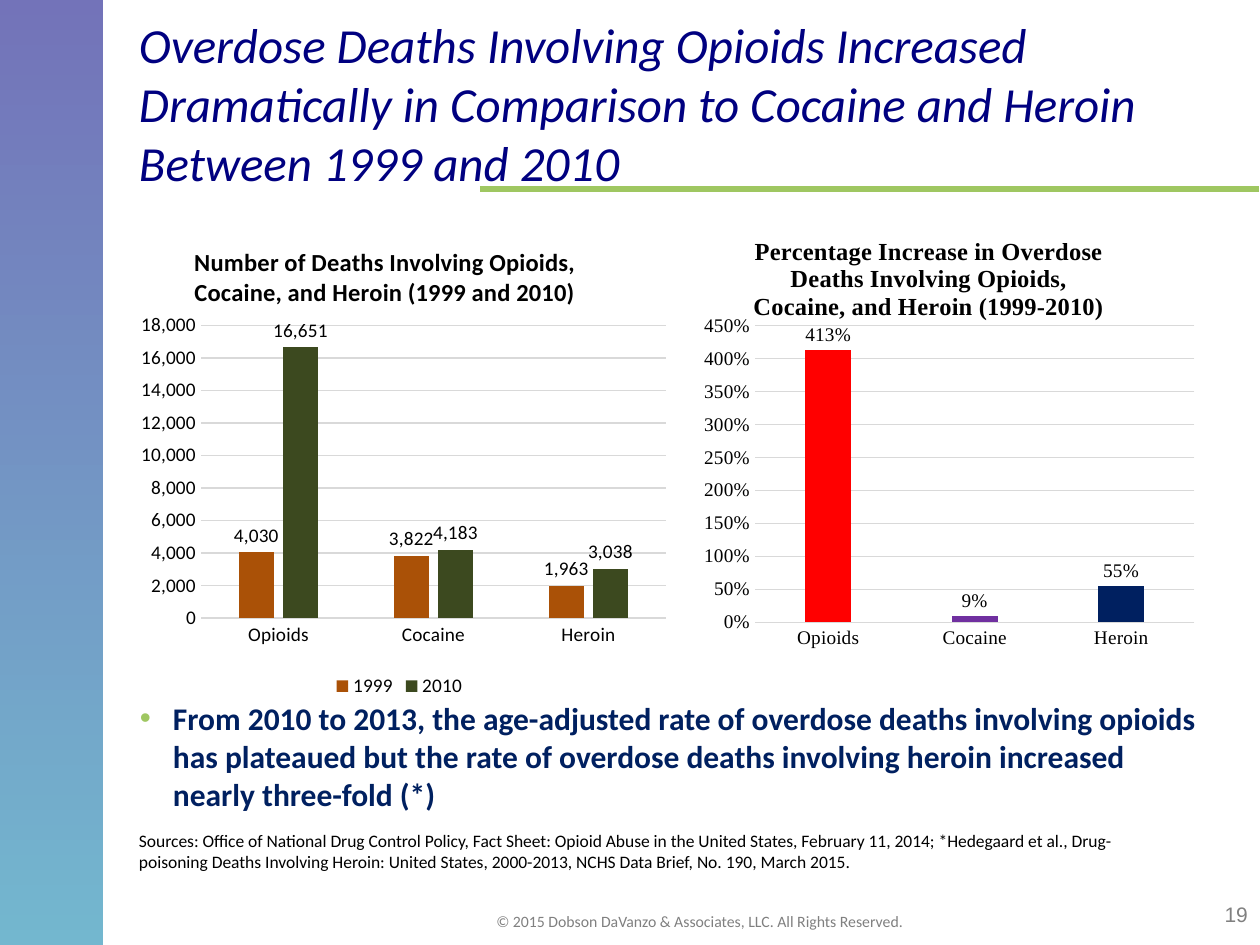
import pptx
import pptx.chart.data
import pptx.dml.color
import pptx.enum.chart
import pptx.enum.dml
import pptx.enum.shapes
import pptx.enum.text
import pptx.oxml
import pptx.oxml.ns
import pptx.util

SCALE = 914400 / 126  # EMU in one px
ALIGN = pptx.enum.text.PP_ALIGN
ANCHOR = pptx.enum.text.MSO_ANCHOR
KINDS = pptx.enum.chart


def px(num):
    return pptx.util.Emu(round(num * SCALE))


def hue(code):
    return pptx.dml.color.RGBColor.from_string(code)


def node(tag, **attrs):
    item = pptx.oxml.parse_xml(f"<{tag} {pptx.oxml.ns.nsdecls(tag.split(':')[0])}/>")
    for key, val in attrs.items():
        item.set(key, str(val))
    return item


def apply(item, **vals):
    for key, val in vals.items():
        setattr(item, key, val)


def style(font, size, color, name="Calibri", **more):
    apply(font, size=pptx.util.Pt(size), name=name, **more)
    font.color.rgb = hue(color)


def layout(**spots):
    """Manual chart layout from fractions of the chart's size."""
    item = node("c:layout")
    hand = node("c:manualLayout")
    item.append(hand)
    if "w" in spots:
        hand.append(node("c:layoutTarget", val="inner"))
    for key in ("x", "y"):
        hand.append(node(f"c:{key}Mode", val="edge"))
    for key, val in spots.items():
        hand.append(node(f"c:{key}", val=val))
    return item


class Deck:
    navy, green, grey, black, rule = "000080", "9FC761", "808080", "000000", "D9D9D9"

    def __init__(self):
        self.show = pptx.Presentation()
        apply(self.show, slide_width=px(1260), slide_height=px(945))
        self.slide = self.show.slides.add_slide(self.show.slide_layouts[1])
        self.shapes = self.slide.shapes

    def band(self, box, stops, alpha):
        rect = self.shapes.add_shape(
            pptx.enum.shapes.MSO_SHAPE.RECTANGLE, *map(px, box))
        rect.shadow.inherit = False
        rect.line.fill.background()
        rect.fill.gradient()
        rect.fill.gradient_angle = 270
        for stop, (place, code) in zip(rect.fill.gradient_stops, stops):
            stop.position = place
            stop.color.rgb = hue(code)
        for tint in rect.fill._xPr.iter(pptx.oxml.ns.qn("a:srgbClr")):
            tint.append(node("a:alpha", val=alpha * 1000))

    def line(self, ends, color, width):
        rule = self.shapes.add_connector(
            pptx.enum.shapes.MSO_CONNECTOR.STRAIGHT, *map(px, ends))
        rule.line.color.rgb = hue(color)
        rule.line.width = pptx.util.Pt(width)
        rule._element.spPr.append(node("a:effectLst"))

    def fill(self, shape, text, size, color, align=ALIGN.LEFT, inset=(12, 6),
             anchor=ANCHOR.TOP, bullet=None, **font):
        frame = shape.text_frame
        side, edge = map(px, inset)
        apply(frame, word_wrap=True, auto_size=pptx.enum.text.MSO_AUTO_SIZE.NONE,
              vertical_anchor=anchor, margin_left=side, margin_right=side,
              margin_top=edge, margin_bottom=edge, text=text)
        para = frame.paragraphs[0]
        apply(para, alignment=align, space_before=pptx.util.Pt(0))
        if bullet:
            props = para._p.get_or_add_pPr()
            props.set("marL", str(px(33)))
            props.set("indent", str(px(-33)))
            tint = node("a:buClr")
            tint.append(node("a:srgbClr", val=self.green))
            props.append(tint)
            props.append(node("a:buFont", typeface="Arial"))
            props.append(node("a:buChar", char=bullet))
        style(para.runs[0].font, size, color, **font)

    def text(self, box, *args, **vals):
        self.fill(self.shapes.add_textbox(*map(px, box)), *args, **vals)

    def holder(self, index, box, *args, **vals):
        shape = self.slide.placeholders[index]
        apply(shape, **dict(zip(("left", "top", "width", "height"), map(px, box))))
        self.fill(shape, *args, **vals)

    def chart(self, box, title, spot, plot, cats, series, form, top, step,
              name="Calibri", points=(), legend=False):
        """Column chart; series maps a name to (values, colour)."""
        data = pptx.chart.data.CategoryChartData(number_format=form)
        data.categories = cats
        for key, (vals, _) in series.items():
            data.add_series(key, vals)
        chart = self.shapes.add_chart(
            KINDS.XL_CHART_TYPE.COLUMN_CLUSTERED, *map(px, box), data).chart
        style(chart.font, 11, self.black, name)
        chart.has_title = True
        head = chart.chart_title
        head.text_frame.text = title
        for para in head.text_frame.paragraphs:
            para.alignment = ALIGN.CENTER
            for run in para.runs:
                style(run.font, 14, self.black, name, bold=True)
        self.place(head._element, layout(**dict(zip("xy", spot))), 1)
        area = chart._chartSpace.chart.plotArea
        self.place(area, layout(**dict(zip("xywh", plot))), 0)
        chart.has_legend = legend
        if legend:
            apply(chart.legend, position=KINDS.XL_LEGEND_POSITION.BOTTOM,
                  include_in_layout=False)
            style(chart.legend.font, 11, self.black, name)
        self.axes(chart, form, top, step, name)
        group = chart.plots[0]
        apply(group, gap_width=219, overlap=-27, vary_by_categories=False,
              has_data_labels=True)
        apply(group.data_labels, show_value=True, number_format=form,
              number_format_is_linked=False,
              position=KINDS.XL_LABEL_POSITION.OUTSIDE_END)
        style(group.data_labels.font, 11, self.black, name)
        for bars, (_, code) in zip(group.series, series.values()):
            self.paint(bars, code)
            for spot, code in enumerate(points):
                self.paint(bars.points[spot], code)

    def place(self, owner, item, index):
        for old in owner.findall(pptx.oxml.ns.qn("c:layout")):
            owner.remove(old)
        owner.insert(index, item)

    def paint(self, item, code):
        item.format.fill.solid()
        item.format.fill.fore_color.rgb = hue(code)

    def axes(self, chart, form, top, step, name):
        vals, cats = chart.value_axis, chart.category_axis
        for axis in (vals, cats):
            apply(axis, major_tick_mark=KINDS.XL_TICK_MARK.NONE,
                  minor_tick_mark=KINDS.XL_TICK_MARK.NONE)
            style(axis.tick_labels.font, 11, self.black, name)
        apply(vals, minimum_scale=0, maximum_scale=top, major_unit=step,
              has_major_gridlines=True)
        apply(vals.tick_labels, number_format=form, number_format_is_linked=False)
        vals.format.line.fill.background()
        for line in (cats.format.line, vals.major_gridlines.format.line):
            line.color.rgb = hue(self.rule)
            line.width = pptx.util.Pt(0.75)


def main():
    deck = Deck()
    drugs = ["Opioids", "Cocaine", "Heroin"]
    deck.line((480, 189, 1259, 189), deck.green, 3)
    deck.band((0, 0, 103, 945), [(0, deck.navy), (1, "007DA8")], 55)
    deck.text((1124, 896, 136, 38), "19", 12, deck.grey, ALIGN.RIGHT, name="Arial")
    deck.text((430, 907, 539, 26),
              "© 2015 Dobson DaVanzo & Associates, LLC. All Rights Reserved.",
              9, deck.grey, ALIGN.CENTER, inset=(11, 5))
    deck.holder(1, (128, 693, 1082, 175),
                "From 2010 to 2013, the age-adjusted rate of overdose deaths involving "
                "opioids has plateaued but the rate of overdose deaths involving heroin "
                "increased nearly three-fold (*)", 18, "002060", bullet="•", bold=True)
    deck.holder(0, (127, 10, 1082, 186),
                "Overdose Deaths Involving Opioids Increased Dramatically in Comparison "
                "to Cocaine and Heroin Between 1999 and 2010",
                28, deck.navy, anchor=ANCHOR.MIDDLE, italic=True)
    deck.text((127, 824, 1040, 55),
              "Sources: Office of National Drug Control Policy, Fact Sheet: Opioid Abuse "
              "in the United States, February 11, 2014; *Hedegaard et al., Drug-poisoning "
              "Deaths Involving Heroin: United States, 2000-2013, NCHS Data Brief, "
              "No. 190, March 2015.", 10, deck.black)
    deck.chart((680, 222, 536, 471),
               "Percentage Increase in Overdose Deaths Involving Opioids,\n"
               "Cocaine, and Heroin (1999-2010)", (0.13, 0.02),
               (0.14, 0.22, 0.82, 0.63), drugs,
               {"Series 1": ((4.13, 0.09, 0.55), "6E953B")}, "0%", 4.5, 0.5,
               name="Times New Roman", points=("FF0000", "7030A0", "002060"))
    deck.chart((116, 231, 567, 472),
               "Number of Deaths Involving Opioids, Cocaine, and Heroin (1999 and 2010)",
               (0.13, 0.02), (0.15, 0.2, 0.82, 0.62), drugs,
               {"1999": ((4030, 3822, 1963), "AA5107"),
                "2010": ((16651, 4183, 3038), "3C491F")},
               "#,##0", 18000, 2000, legend=True)
    deck.show.save("out.pptx")


if __name__ == "__main__":
    main()
